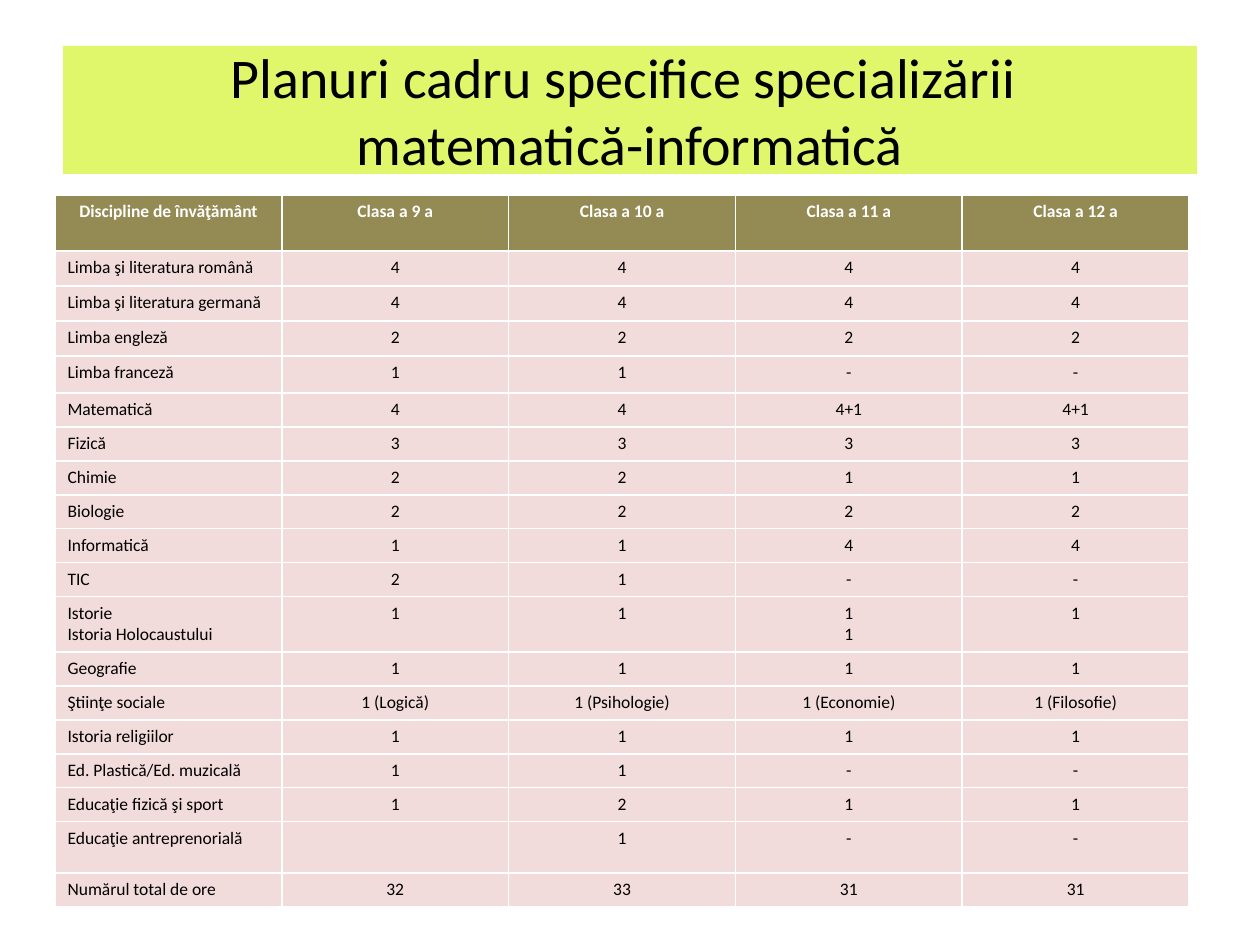
from pptx import Presentation
from pptx import util as u
from pptx.dml.color import RGBColor
from pptx.enum import text

LIME = RGBColor(0xE1, 0xF7, 0x6B)
OLIVE = RGBColor(0x94, 0x8A, 0x54)
ROSE = RGBColor(0xF2, 0xDC, 0xDB)
BLACK = RGBColor(0, 0, 0)
WHITE = RGBColor(0xFF, 0xFF, 0xFF)

PIXELS_PER_INCH = 126
HEADER_HEIGHT = 56
ROW_HEIGHT = 34

HEADER = ["Discipline de învăţământ"] + [f"Clasa a {grade} a" for grade in range(9, 13)]
SUBJECTS = [
    ("Limba şi literatura română", "4", "4", "4", "4"),
    ("Limba şi literatura germană", "4", "4", "4", "4"),
    ("Limba engleză", "2", "2", "2", "2"),
    ("Limba franceză", "1", "1", "-", "-"),
    ("Matematică", "4", "4", "4+1", "4+1"),
    ("Fizică", "3", "3", "3", "3"),
    ("Chimie", "2", "2", "1", "1"),
    ("Biologie", "2", "2", "2", "2"),
    ("Informatică", "1", "1", "4", "4"),
    ("TIC", "2", "1", "-", "-"),
    ("Istorie\nIstoria Holocaustului", "1", "1", "1\n1", "1"),
    ("Geografie", "1", "1", "1", "1"),
    ("Ştiinţe sociale", "1 (Logică)", "1 (Psihologie)", "1 (Economie)", "1 (Filosofie)"),
    ("Istoria religiilor", "1", "1", "1", "1"),
    ("Ed. Plastică/Ed. muzicală", "1", "1", "-", "-"),
    ("Educaţie fizică şi sport", "1", "2", "1", "1"),
    ("Educaţie antreprenorială", "", "1", "-", "-"),
    ("Numărul total de ore", "32", "33", "31", "31"),
]
SPECIAL_HEIGHTS = {
    "Limba şi literatura română": 35,
    "Limba şi literatura germană": 35,
    "Limba engleză": 35,
    "Limba franceză": 37,
    "Istorie\nIstoria Holocaustului": 55,
    "Educaţie antreprenorială": 48,
}


def px(length):
    return u.Inches(length / PIXELS_PER_INCH)


class SlideBuilder:
    font = "Calibri"

    def __init__(self, deck):
        self.page = deck.slides.add_slide(deck.slide_layouts[5])

    def format_text(self, frame, size, color, align, bold=False):
        for para in frame.paragraphs:
            para.alignment = align
            for span in para.runs:
                span.font.name = self.font
                span.font.size = u.Pt(size)
                span.font.bold = bold
                span.font.color.rgb = color

    def title(self, words, left, top, width, height):
        box = self.page.shapes.title
        box.left, box.top, box.width, box.height = map(px, (left, top, width, height))
        box.fill.solid()
        box.fill.fore_color.rgb = LIME
        frame = box.text_frame
        frame.text = words
        frame.word_wrap = True
        frame.auto_size = text.MSO_AUTO_SIZE.NONE
        frame.vertical_anchor = text.MSO_ANCHOR.MIDDLE
        self.format_text(frame, 32, BLACK, text.PP_ALIGN.CENTER)

    def table(self, rows, heights, left, top, width):
        columns = len(rows[0])
        frame = self.page.shapes.add_table(
            len(rows), columns, px(left), px(top), px(width), px(sum(heights)))
        grid = frame.table
        for row, height in zip(grid.rows, heights):
            row.height = px(height)
        for row_index, values in enumerate(rows):
            for column_index, value in enumerate(values):
                self.cell(grid.cell(row_index, column_index), value,
                          is_header=row_index == 0, is_label=column_index == 0)

    def cell(self, cell, value, is_header, is_label):
        cell.fill.solid()
        cell.fill.fore_color.rgb = OLIVE if is_header else ROSE
        cell.text_frame.text = value
        left_aligned = is_label and not is_header
        align = text.PP_ALIGN.LEFT if left_aligned else text.PP_ALIGN.CENTER
        self.format_text(cell.text_frame, 10, WHITE if is_header else BLACK,
                         align, bold=is_header)


def main():
    deck = Presentation()
    deck.slide_width, deck.slide_height = px(1260), px(945)
    slide = SlideBuilder(deck)
    slide.title("Planuri cadru specifice specializării \vmatematică-informatică",
                63, 46, 1134, 128)
    heights = [HEADER_HEIGHT] + [
        SPECIAL_HEIGHTS.get(subject[0], ROW_HEIGHT) for subject in SUBJECTS]
    slide.table([HEADER] + SUBJECTS, heights, 55, 195, 1134)
    deck.save("out.pptx")


if __name__ == "__main__":
    main()
